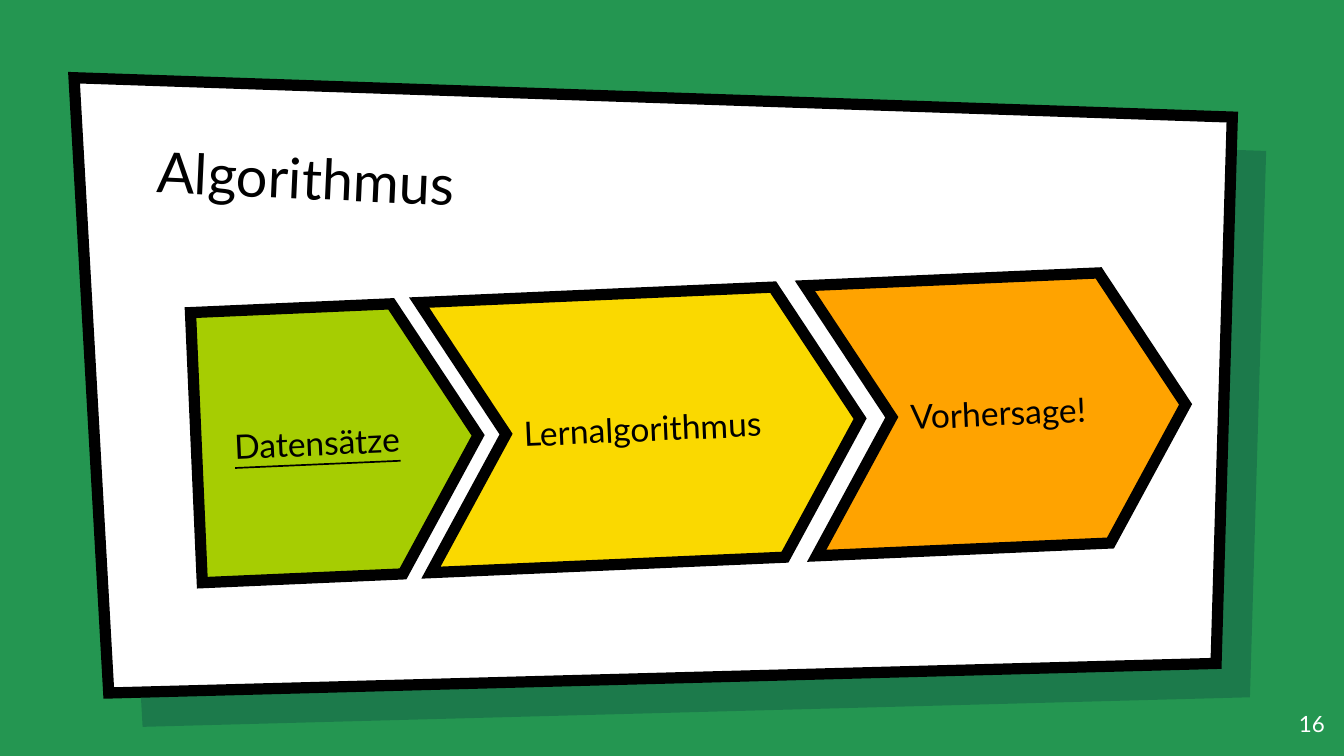
from math import radians, tan

from lxml.etree import SubElement
from pptx import Presentation
from pptx.dml.color import RGBColor
from pptx.enum.shapes import MSO_SHAPE
from pptx.enum.text import MSO_ANCHOR, PP_ALIGN
from pptx.oxml.ns import qn
from pptx.util import Cm, Pt

TILT = -2.5


def color(value):
    return RGBColor.from_string(value)


def paint(sp, fill, outlined=True):
    sp.shadow.inherit = False
    sp.fill.solid()
    sp.fill.fore_color.rgb = color(fill)
    if not outlined:
        sp.line.fill.background()
        return
    sp.line.color.rgb = color("000000")
    sp.line.width = Pt(6)
    SubElement(sp.line._get_or_add_ln(), qn("a:miter"), lim="800000")


def write(sp, text, size, align, anchor, font_color="000000", underline=False):
    tf = sp.text_frame
    tf.word_wrap = True
    tf.vertical_anchor = anchor
    tf.margin_left = tf.margin_right = Cm(0.25)
    tf.margin_top = tf.margin_bottom = Cm(0.25)
    p = tf.paragraphs[0]
    p.alignment = align
    r = p.add_run()
    r.text = text
    r.font.name = "Lato"
    r.font.size = Pt(size)
    r.font.color.rgb = color(font_color)
    if underline:
        r.font.underline = True


def add_label(s, text, box, size, align, anchor, font_color="000000", rotation=0):
    sp = s.shapes.add_textbox(*map(Cm, box))
    sp.rotation = rotation
    write(sp, text, size, align, anchor, font_color)


def add_sheet(s, left, top, width, height, fill, outlined):
    corners = [(0, 0), (1, 0.064), (0.986, 0.952), (0.03, 1)]
    points = [(Cm(left + x * width), Cm(top + y * height)) for x, y in corners]
    builder = s.shapes.build_freeform(*points[0])
    builder.add_line_segments(points[1:], close=True)
    sp = builder.convert_to_shape()
    paint(sp, fill, outlined)
    return sp


def add_panel(s, left, top, width, height):
    offset = 0.64
    shade = add_sheet(s, left + offset, top + offset, width, height, "001936", False)
    fill = shade.fill._xPr.find(qn("a:solidFill"))
    SubElement(fill[0], qn("a:alpha"), val="22000")
    add_sheet(s, left, top, width, height, "FFFFFF", True)
    add_label(s, "Algorithmus", (left + 1.32, top + 0.97, 19.53, 2.11),
              30, PP_ALIGN.LEFT, MSO_ANCHOR.BOTTOM, rotation=2.7)


def add_process(s, left, top, height):
    steps = [
        ("Datensätze", MSO_SHAPE.PENTAGON, 0, 5.33, "A6CD02"),
        ("Lernalgorithmus", MSO_SHAPE.CHEVRON, 4.32, 8.23, "FAD900"),
        ("Vorhersage!", MSO_SHAPE.CHEVRON, 11.61, 7.09, "FFA300"),
    ]
    first_center = steps[0][3] / 2
    for text, kind, x, width, fill in steps:
        y = (x + width / 2 - first_center) * tan(radians(TILT))
        sp = s.shapes.add_shape(kind, Cm(left + x), Cm(top + y), Cm(width), Cm(height))
        sp.adjustments[0] = 0.3
        sp.rotation = TILT
        paint(sp, fill)
        write(sp, text, 18, PP_ALIGN.CENTER, MSO_ANCHOR.MIDDLE,
              underline=kind == MSO_SHAPE.PENTAGON)


def main():
    prs = Presentation()
    prs.slide_width, prs.slide_height = Cm(25.4), Cm(14.29)
    s = prs.slides.add_slide(prs.slide_layouts[6])
    s.background.fill.solid()
    s.background.fill.fore_color.rgb = color("249651")
    add_panel(s, 1.4, 1.47, 21.89, 11.63)
    add_label(s, "16", (23.77, 13.18, 1.52, 1.09),
              12, PP_ALIGN.RIGHT, MSO_ANCHOR.TOP, "FFFFFF")
    add_process(s, 3.71, 5.79, 5.11)
    prs.save("out.pptx")


if __name__ == "__main__":
    main()
